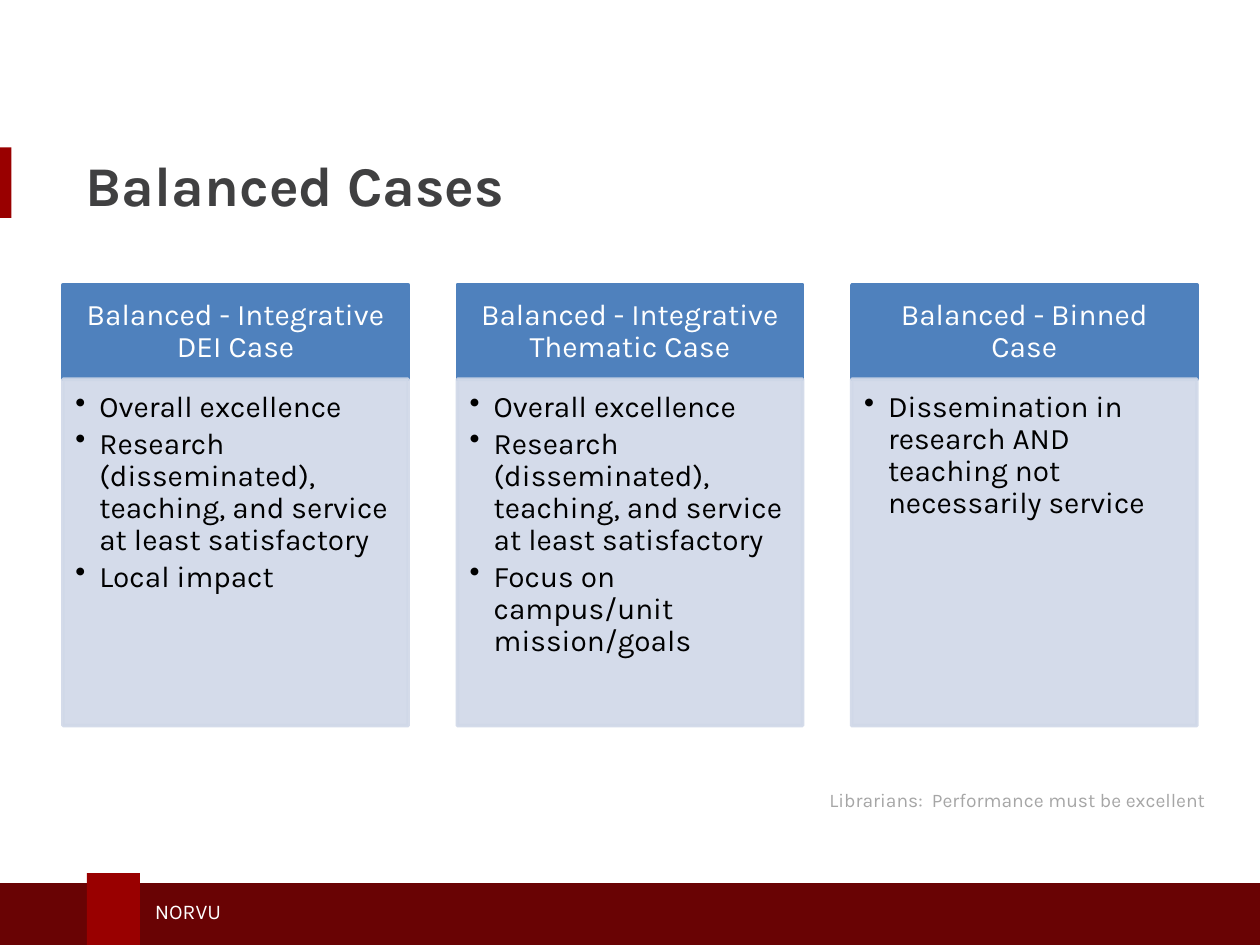
from lxml import etree
from pptx import Presentation
from pptx.dml.color import RGBColor
from pptx.enum.shapes import MSO_SHAPE
from pptx.enum.text import MSO_ANCHOR, PP_ALIGN
from pptx.oxml.ns import qn
from pptx.util import Inches, Pt

RECTANGLE = MSO_SHAPE.RECTANGLE
TOP, MIDDLE = MSO_ANCHOR.TOP, MSO_ANCHOR.MIDDLE
LEFT, CENTER, RIGHT = PP_ALIGN.LEFT, PP_ALIGN.CENTER, PP_ALIGN.RIGHT

FONT = "Karla"
CRIMSON = RGBColor(0x99, 0x00, 0x00)
MAROON = RGBColor(0x69, 0x03, 0x04)
BLUE = RGBColor(0x4F, 0x81, 0xBD)
PALE_BLUE = RGBColor(0xD0, 0xD8, 0xE8)
CHARCOAL = RGBColor(0x40, 0x40, 0x41)
GRAY = RGBColor(0xA6, 0xA6, 0xA6)
BLACK = RGBColor(0x00, 0x00, 0x00)
WHITE = RGBColor(0xFF, 0xFF, 0xFF)

TITLE = "Balanced Cases"
NOTE = "Librarians:  Performance must be excellent"
FOOTER = "NORVU"
SHARED_POINTS = [
    "Overall excellence",
    "Research (disseminated), teaching, and service at least satisfactory",
]
CASES = [
    ("Balanced - Integrative DEI Case", SHARED_POINTS + ["Local impact"]),
    ("Balanced - Integrative Thematic Case",
     SHARED_POINTS + ["Focus on campus/unit mission/goals"]),
    ("Balanced - Binned Case",
     ["Dissemination in research AND teaching not necessarily service"]),
]

CASE_LEFT, CASE_TOP = 0.5, 2.26
CASE_WIDTH, CASE_PITCH = 2.74, 3.13
HEADING_HEIGHT, POINTS_HEIGHT = 0.75, 2.75
CASE_SIZE = 17


def place(shape, left, top, width, height):
    shape.left, shape.top = Inches(left), Inches(top)
    shape.width, shape.height = Inches(width), Inches(height)


def add_block(slide, box, color, outlined=False, opacity=None):
    """Add a flat rectangle, optionally outlined and see-through (percent)."""
    block = slide.shapes.add_shape(RECTANGLE, *map(Inches, box))
    block.shadow.inherit = False
    block.fill.solid()
    block.fill.fore_color.rgb = color
    if outlined:
        block.line.color.rgb = color
        block.line.width = Pt(2)
    else:
        block.line.fill.background()
    if opacity is not None:
        for tint in block._element.spPr.iter(qn("a:srgbClr")):
            etree.SubElement(tint, qn("a:alpha"), val=str(opacity * 1000))
    return block


def set_frame(shape, anchor, insets=(0.1, 0.05, 0.1, 0.05)):
    frame = shape.text_frame
    frame.word_wrap = True
    frame.vertical_anchor = anchor
    (frame.margin_left, frame.margin_top,
     frame.margin_right, frame.margin_bottom) = map(Inches, insets)
    return frame


def write(paragraph, text, size, color, align=LEFT, bold=False):
    paragraph.alignment = align
    run = paragraph.add_run()
    run.text = text
    run.font.name = FONT
    run.font.size = Pt(size)
    run.font.bold = bold
    run.font.color.rgb = color


def set_spacing(paragraph, after, line=1.0):
    paragraph.space_before = Pt(0)
    paragraph.space_after = Pt(after)
    paragraph.line_spacing = line


def set_bullet(paragraph, char=None, indent=0.0):
    properties = paragraph._p.get_or_add_pPr()
    properties.set("marL", str(Inches(indent)))
    properties.set("indent", str(-Inches(indent)))
    if char:
        etree.SubElement(properties, qn("a:buChar"), char=char)
    else:
        etree.SubElement(properties, qn("a:buNone"))


def add_case(slide, left, heading, points):
    heading_block = add_block(
        slide, (left, CASE_TOP, CASE_WIDTH, HEADING_HEIGHT), BLUE, outlined=True)
    frame = set_frame(heading_block, MIDDLE, (0.13, 0.08, 0.13, 0.08))
    write(frame.paragraphs[0], heading, CASE_SIZE, WHITE, CENTER)
    set_spacing(frame.paragraphs[0], 0.35 * CASE_SIZE, 0.9)

    points_block = add_block(
        slide, (left, CASE_TOP + HEADING_HEIGHT, CASE_WIDTH, POINTS_HEIGHT),
        PALE_BLUE, outlined=True, opacity=90)
    frame = set_frame(points_block, TOP, (0.1, 0.1, 0.13, 0.15))
    for index, point in enumerate(points):
        paragraph = frame.add_paragraph() if index else frame.paragraphs[0]
        write(paragraph, point, CASE_SIZE, BLACK)
        set_spacing(paragraph, 0.15 * CASE_SIZE, 0.9)
        set_bullet(paragraph, "•", 0.19)


def add_footer(slide):
    add_block(slide, (-0.03, 7.01, 10.09, 0.5), MAROON)
    add_block(slide, (0.69, 6.93, 0.42, 0.58), CRIMSON)
    label = slide.shapes.add_textbox(*map(Inches, (1.13, 7.08, 3.95, 0.3)))
    write(set_frame(label, MIDDLE).paragraphs[0], FOOTER, 12, WHITE)


def main():
    deck = Presentation()
    deck.slide_width, deck.slide_height = Inches(10), Inches(7.5)
    slide = deck.slides.add_slide(deck.slide_layouts[1])

    add_block(slide, (0, 1.17, 0.09, 0.56), CRIMSON)
    add_footer(slide)

    title = slide.shapes.title
    place(title, 0.58, 1.11, 8.75, 0.7)
    write(set_frame(title, MIDDLE).paragraphs[0], TITLE, 32, CHARCOAL, bold=True)

    note = slide.placeholders[1]
    place(note, 5.62, 6.21, 4.05, 0.37)
    paragraph = set_frame(note, TOP).paragraphs[0]
    write(paragraph, NOTE, 11, GRAY, RIGHT)
    set_spacing(paragraph, 18)
    set_bullet(paragraph)

    for index, (heading, points) in enumerate(CASES):
        add_case(slide, CASE_LEFT + index * CASE_PITCH, heading, points)

    deck.save("out.pptx")


if __name__ == "__main__":
    main()
